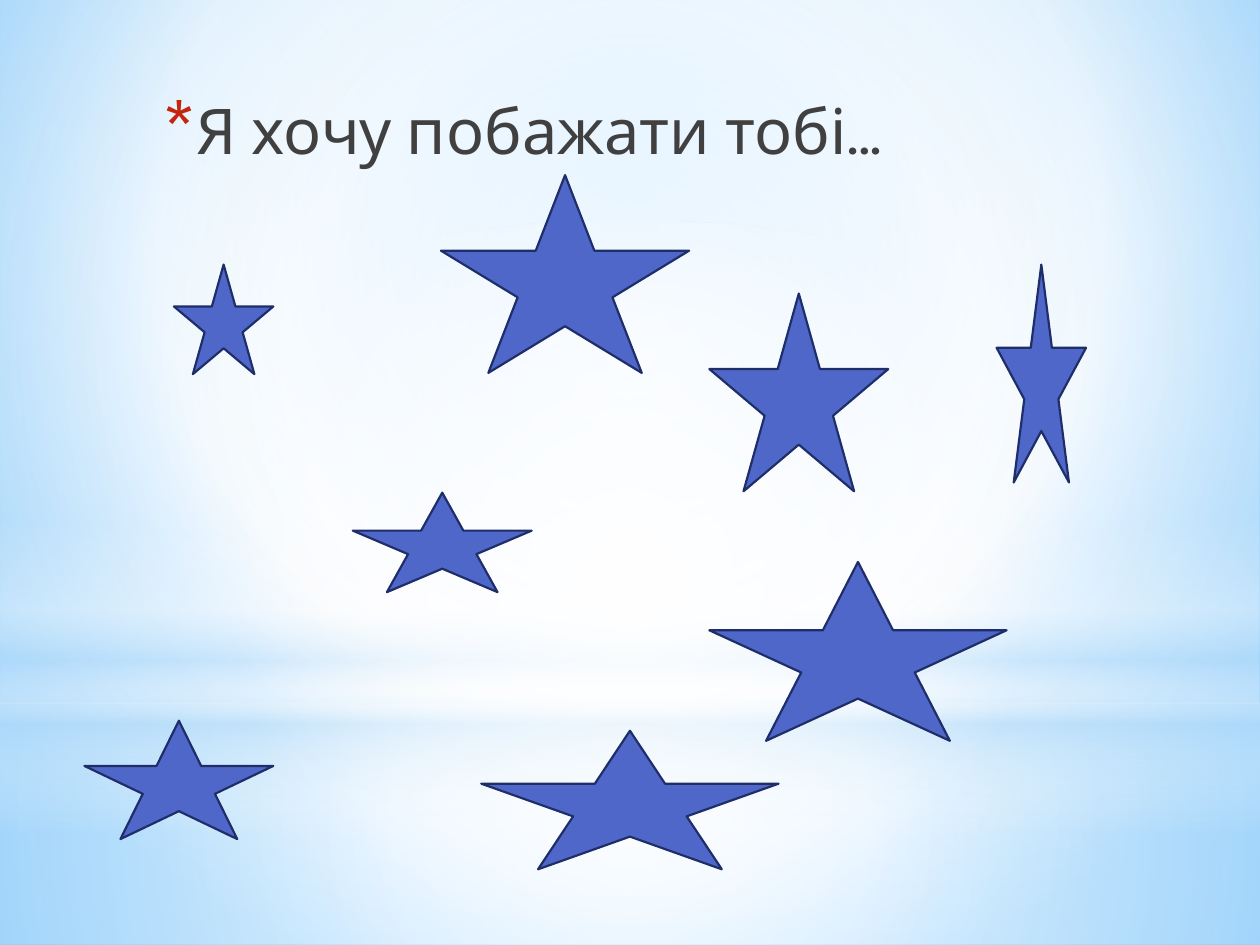
from lxml import etree
from pptx import Presentation
from pptx.dml.color import RGBColor
from pptx.enum.shapes import MSO_SHAPE
from pptx.enum.text import MSO_ANCHOR, MSO_AUTO_SIZE, PP_ALIGN
from pptx.oxml import parse_xml
from pptx.oxml.ns import nsdecls, qn
from pptx.util import Inches, Pt

COLORS = {"white": "FFFFFF", "sky": "9ED5FF", "deep": "5BB9FF", "pale": "B4DCFA",
          "star": "4E67C8", "outline": "1F2E69", "bullet": "C3260C", "text": "404040"}
FONT = "Karla"
WISH = "Я хочу побажати тобі…"
WISH_BOX = (1.14, 0.68, 7, 3.8)
CENTER = (50, 50, 50, 50)

# Gradient stops: position %, colour, opacity %
BACKGROUND = [(0, "sky", 100), (60, "white", 100), (100, "deep", 100)]
BACKGROUND_FOCUS = (20, 10, 20, 60)

# Shape, box, stops, focus rectangle (None for a vertical gradient)
LAYERS = [
    (MSO_SHAPE.RECTANGLE, (0, 5.58, 10, 1.92),
     [(0, "white", 91), (37, "white", 76), (100, "pale", 79)], CENTER),
    (MSO_SHAPE.RECTANGLE, (0, 0, 10, 5.58),
     [(0, "white", 89), (48, "white", 62), (100, "pale", 79)], CENTER),
    (MSO_SHAPE.RECTANGLE, (0, 4.12, 10, 2.5),
     [(0, "white", 0), (29, "white", 30), (45, "pale", 40),
      (55, "white", 26), (65, "pale", 60), (100, "white", 0)], None),
    (MSO_SHAPE.OVAL, (0, 1.75, 10, 5.58),
     [(0, "white", 100), (56, "white", 0)], CENTER),
]

STARS = [
    (1.38, 2.1, 0.79, 0.87), (2.8, 3.91, 1.42, 0.79),
    (5.63, 2.33, 1.42, 1.57), (3.5, 1.39, 1.97, 1.57),
    (5.63, 4.46, 2.36, 1.42), (0.67, 5.72, 1.5, 0.94),
    (7.91, 2.1, 0.71, 1.73), (3.82, 5.8, 2.36, 1.1),
]


def rgb(name):
    return RGBColor.from_string(COLORS[name])


def set_gradient(parent, stops, focus):
    """Replace the solid fill in parent with a circular or vertical gradient."""
    gs = "".join(
        f'<a:gs pos="{pos * 1000}"><a:srgbClr val="{COLORS[color]}">'
        f'<a:alpha val="{opacity * 1000}"/></a:srgbClr></a:gs>'
        for pos, color, opacity in stops)
    if focus:
        sides = " ".join(f'{side}="{v * 1000}"' for side, v in zip("ltrb", focus))
        direction = f'<a:path path="circle"><a:fillToRect {sides}/></a:path>'
    else:
        direction = '<a:lin ang="5400000" scaled="0"/>'
    grad = parse_xml(f'<a:gradFill {nsdecls("a")} rotWithShape="1">'
                     f'<a:gsLst>{gs}</a:gsLst>{direction}</a:gradFill>')
    parent.replace(parent.find(qn("a:solidFill")), grad)


def add_shape(slide, kind, box, color):
    sp = slide.shapes.add_shape(kind, *map(Inches, box))
    sp.shadow.inherit = False
    sp.fill.solid()
    sp.fill.fore_color.rgb = rgb(color)
    return sp


def add_layer(slide, kind, box, stops, focus):
    sp = add_shape(slide, kind, box, "white")
    sp.line.fill.background()
    set_gradient(sp._element.spPr, stops, focus)


def add_star(slide, box):
    sp = add_shape(slide, MSO_SHAPE.STAR_5_POINT, box, "star")
    sp.line.color.rgb = rgb("outline")
    sp.line.width = Pt(1.25)


def set_bullet(p):
    pPr = p._p.get_or_add_pPr()
    pPr.set("marL", str(Inches(0.25)))
    pPr.set("indent", str(Inches(-0.2)))
    before = parse_xml(f'<a:spcBef {nsdecls("a")}><a:spcPct val="20000"/></a:spcBef>')
    pPr.find(qn("a:spcAft")).addprevious(before)
    color = etree.Element(qn("a:buClr"))
    etree.SubElement(color, qn("a:srgbClr"), val=COLORS["bullet"])
    bullet = [color,
              etree.Element(qn("a:buSzPct"), val="130000"),
              etree.Element(qn("a:buFont"), typeface=FONT),
              etree.Element(qn("a:buChar"), char="*")]
    follower = pPr.find(qn("a:defRPr"))
    for el in bullet:
        follower.addprevious(el)


def fill_wish(slide, body):
    body.left, body.top, body.width, body.height = map(Inches, WISH_BOX)
    tf = body.text_frame
    tf.text = WISH
    tf.word_wrap = True
    tf.auto_size = MSO_AUTO_SIZE.NONE
    tf.vertical_anchor = MSO_ANCHOR.TOP
    p = tf.paragraphs[0]
    p.alignment = PP_ALIGN.LEFT
    p.space_after = Pt(3)
    # Some viewers read the font from the run only
    for font in (p.font, p.runs[0].font):
        font.size = Pt(36)
        font.name = FONT
        font.color.rgb = rgb("text")
    set_bullet(p)
    slide.shapes._spTree.append(body._element)  # bring to front


def main():
    prs = Presentation()
    prs.slide_width, prs.slide_height = Inches(10), Inches(7.5)
    slide = prs.slides.add_slide(prs.slide_layouts[1])
    title, body = slide.placeholders
    title._element.getparent().remove(title._element)

    fill = slide.background.fill
    fill.solid()
    fill.fore_color.rgb = rgb("white")
    set_gradient(slide._element.find(".//" + qn("p:bgPr")), BACKGROUND, BACKGROUND_FOCUS)

    for layer in LAYERS:
        add_layer(slide, *layer)
    for box in STARS:
        add_star(slide, box)
    fill_wish(slide, body)
    prs.save("out.pptx")


if __name__ == "__main__":
    main()
